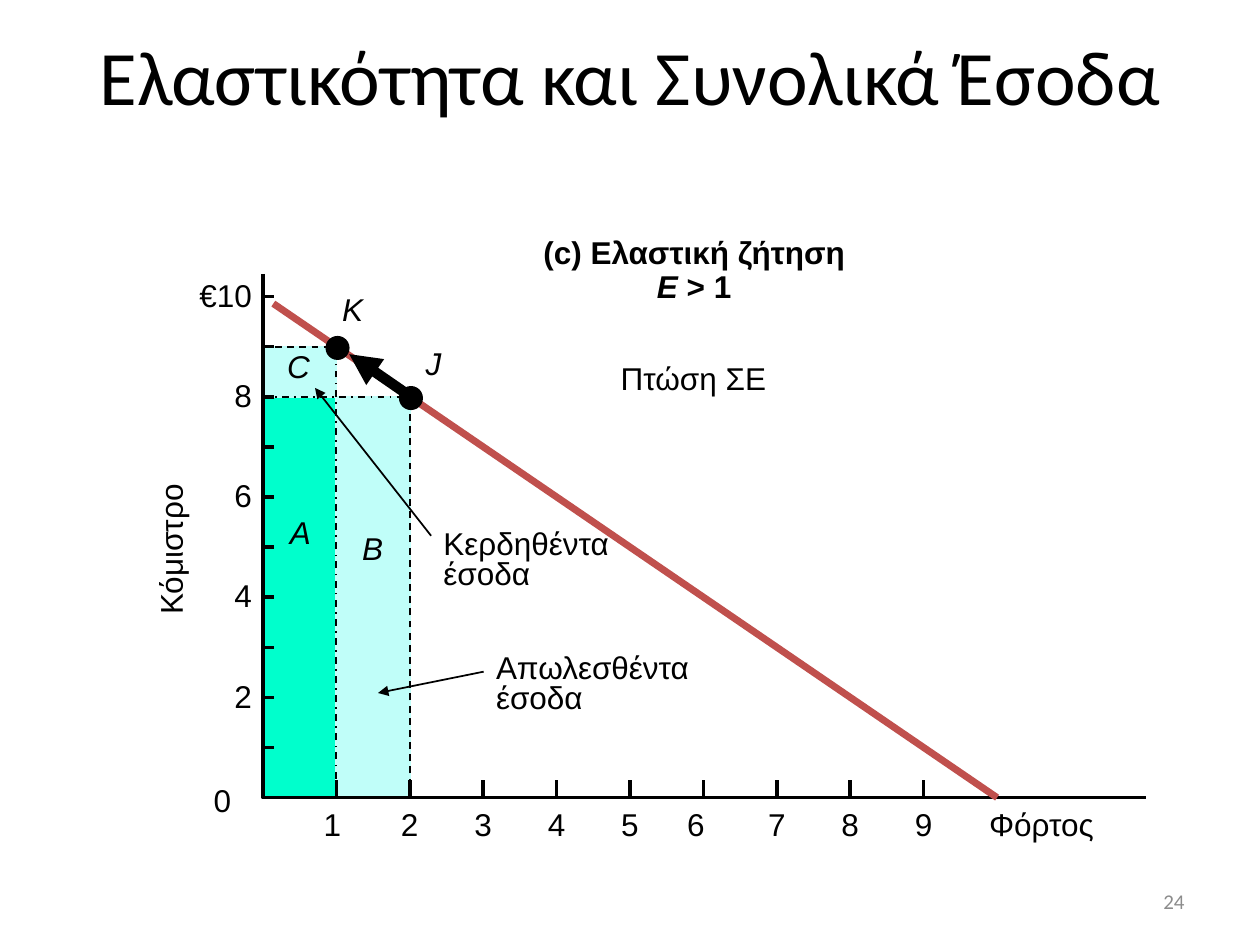
"""Build the slide on elasticity and total revenue with its demand diagram."""
from lxml.etree import SubElement
from pptx import Presentation
from pptx.dml.color import RGBColor
from pptx.enum.dml import MSO_LINE
from pptx.enum.shapes import MSO_CONNECTOR, MSO_SHAPE
from pptx.enum.text import MSO_ANCHOR, PP_ALIGN
from pptx.oxml.ns import qn
from pptx.util import Cm, Pt

LEFT, CENTER, RIGHT = PP_ALIGN.LEFT, PP_ALIGN.CENTER, PP_ALIGN.RIGHT
THEME = {
    "ink": "000000", "kept": "00FFCC", "changed": "C0FEF9",
    "demand": "C0504D", "muted": "8C8C8C",
    "title": {"name": "Calibri", "size": Pt(44)},
    "label": {"name": "Arial", "size": Pt(18)},
    "number": {"name": "Calibri", "size": Pt(12)},
}
TITLE = "Ελαστικότητα και Συνολικά Έσοδα"
PAGE_NUMBER = "24"
ORIGIN_X, ORIGIN_Y, UNIT_X, UNIT_Y = 5.3, 16.08, 1.48, 1.01
AXIS_TOP, AXIS_RIGHT = 5.52, 23.1
PRICES = {10: "€10", 8: "8", 6: "6", 4: "4", 2: "2"}
QUANTITIES = range(1, 10)
NUDGES = {1: -0.08, 6: -0.15}
AREAS = [
    ("A", (0, 8, 1, 0), "kept", (5.51, 10.21, 1.09, 1.0)),
    ("B", (1, 8, 2, 0), "changed", (6.98, 10.54, 1.07, 1.0)),
    ("C", (0, 9, 1, 8), "changed", (5.46, 6.88, 1.12, 1.0)),
]
POINTS = [("K", 1, 9, (6.65, 5.72, 1.07, 1.0)), ("J", 2, 8, (8.33, 6.81, 0.91, 1.0))]
GUIDES = [
    ((2, 0), (2, 8), MSO_LINE.DASH),
    ((0, 8), (2, 8), MSO_LINE.DASH_DOT),
    ((1, 0), (1, 9), MSO_LINE.DASH_DOT),
    ((0, 9), (1, 9), MSO_LINE.DASH),
]
CALLOUTS = [
    ("Απωλεσθέντα έσοδα", (9.75, 13.08, 4.8, 1.47), (9.75, 13.54, 7.62, 13.97)),
    ("Κερδηθέντα έσοδα", (8.69, 10.59, 4.32, 1.47), (8.69, 10.8, 6.35, 7.82)),
]


def at(quantity, price):
    """Return the slide position in centimetres of a point on the diagram."""
    return ORIGIN_X + quantity * UNIT_X, ORIGIN_Y - price * UNIT_Y


def paint(target, color):
    """Give a fill one solid colour."""
    target.solid()
    target.fore_color.rgb = RGBColor.from_string(THEME[color])


def write(box, lines, style="label", color="ink", align=LEFT, spacing=None, wrap=False, **look):
    """Fill a box with lines, each a list of (text, font changes) spans."""
    frame = box.text_frame
    frame.word_wrap = wrap
    for index, spans in enumerate(lines):
        para = frame.add_paragraph() if index else frame.paragraphs[0]
        para.alignment, para.line_spacing = align, spacing
        for text, changes in spans:
            span = para.add_run()
            span.text = text
            for name, value in {**THEME[style], **look, **changes}.items():
                setattr(span.font, name, value)
            span.font.color.rgb = RGBColor.from_string(THEME[color])


def add_label(page, text, place, **options):
    """Add a one-line text box and return it."""
    box = page.shapes.add_textbox(*map(Cm, place))
    write(box, [[(text, {})]], **options)
    return box


def add_line(page, start, end, color="ink", width=1, dash=None, arrow=False):
    """Add a straight line, with an arrowhead at its end if asked."""
    line = page.shapes.add_connector(MSO_CONNECTOR.STRAIGHT, *map(Cm, (*start, *end)))
    paint(line.line.fill, color)
    line.line.width = Pt(width)
    if dash:
        line.line.dash_style = dash
    if arrow:
        SubElement(line.line._get_or_add_ln(), qn("a:tailEnd"), type="triangle")
    SubElement(line._element.spPr, qn("a:effectLst"))


def add_solid(page, kind, place, color):
    """Add a filled shape without a shadow."""
    shape = page.shapes.add_shape(kind, *map(Cm, place))
    shape.shadow.inherit = False
    paint(shape.fill, color)
    paint(shape.line.fill, color)
    shape.line.width = Pt(1)


def add_axes(page):
    """Draw both axes with ticks and tick labels."""
    corners = [(ORIGIN_X, AXIS_TOP), (ORIGIN_X, ORIGIN_Y), (AXIS_RIGHT, ORIGIN_Y)]
    points = [(Cm(x), Cm(y)) for x, y in corners]
    builder = page.shapes.build_freeform(*points[0])
    builder.add_line_segments(points[1:], close=False)
    axes = builder.convert_to_shape()
    axes.shadow.inherit = False
    axes.fill.background()
    paint(axes.line.fill, "ink")
    axes.line.width = Pt(2)
    for price in range(1, 11):
        x, y = at(0, price)
        add_line(page, (x, y), (x + 0.22, y), width=2)
    for quantity in QUANTITIES:
        x, y = at(quantity, 0)
        add_line(page, (x, y), (x, y - 0.36), width=2)
        left = x - 0.48 + NUDGES.get(quantity, 0)
        add_label(page, str(quantity), (left, 16.1, 0.96, 1.0), align=CENTER)
    for price, text in PRICES.items():
        box = add_label(page, text, (4.02, at(0, price)[1] - 0.42, 1.06, 0.76), align=RIGHT)
        for side in ("left", "right", "top", "bottom"):
            setattr(box.text_frame, f"margin_{side}", 0)
    add_label(page, "0", (3.94, 15.62, 0.97, 1.0), align=RIGHT)
    add_label(page, "Φόρτος", (19.69, 16.1, 2.64, 1.0))
    add_label(page, "Κόμιστρο", (1.85, 10.59, 3.18, 1.02), align=RIGHT).rotation = 270


def add_diagram(page):
    """Draw the revenue areas, the demand line and the move from J to K."""
    for name, (q1, p1, q2, p2), color, place in AREAS:
        (left, top), (right, bottom) = at(q1, p1), at(q2, p2)
        add_solid(page, MSO_SHAPE.RECTANGLE, (left, top, right - left, bottom - top), color)
        add_label(page, name, place, align=CENTER, italic=True)
    add_axes(page)
    add_line(page, (5.51, 6.12), at(10, 0), "demand", 4)
    for start, end, dash in GUIDES:
        add_line(page, at(*start), at(*end), dash=dash)
    add_line(page, (8.33, 8.03), (7.04, 7.14), width=6, arrow=True)
    for name, quantity, price, place in POINTS:
        x, y = at(quantity, price)
        add_solid(page, MSO_SHAPE.OVAL, (x - 0.2, y - 0.2, 0.45, 0.45), "ink")
        add_label(page, name, place, italic=True)
    for text, place, (x1, y1, x2, y2) in CALLOUTS:
        add_label(page, text, place, spacing=0.8, wrap=True)
        add_line(page, (x1, y1), (x2, y2), arrow=True)


def main():
    """Build and save the deck."""
    deck = Presentation()
    deck.slide_width, deck.slide_height = Cm(25.4), Cm(19.05)
    page = deck.slides.add_slide(deck.slide_layouts[5])
    title = page.shapes.title
    title.left, title.top, title.width, title.height = map(Cm, (0.02, -0.08, 25.38, 3.18))
    title.text_frame.vertical_anchor = MSO_ANCHOR.MIDDLE
    write(title, [[(TITLE, {})]], "title", align=CENTER, wrap=True)
    add_diagram(page)
    heading = page.shapes.add_textbox(*map(Cm, (10.67, 4.65, 6.65, 1.63)))
    lines = [[("(c) Ελαστική ζήτηση", {})], [("E ", {"italic": True}), ("> 1", {})]]
    write(heading, lines, align=CENTER, spacing=0.9, bold=True)
    add_label(page, "Πτώση ΣΕ", (12.24, 7.19, 3.48, 0.94), align=CENTER, spacing=0.9)
    number = add_label(page, PAGE_NUMBER, (18.21, 17.65, 5.92, 1.02),
                       style="number", color="muted", align=RIGHT, wrap=True)
    number.text_frame.vertical_anchor = MSO_ANCHOR.MIDDLE
    deck.save("out.pptx")


if __name__ == "__main__":
    main()
